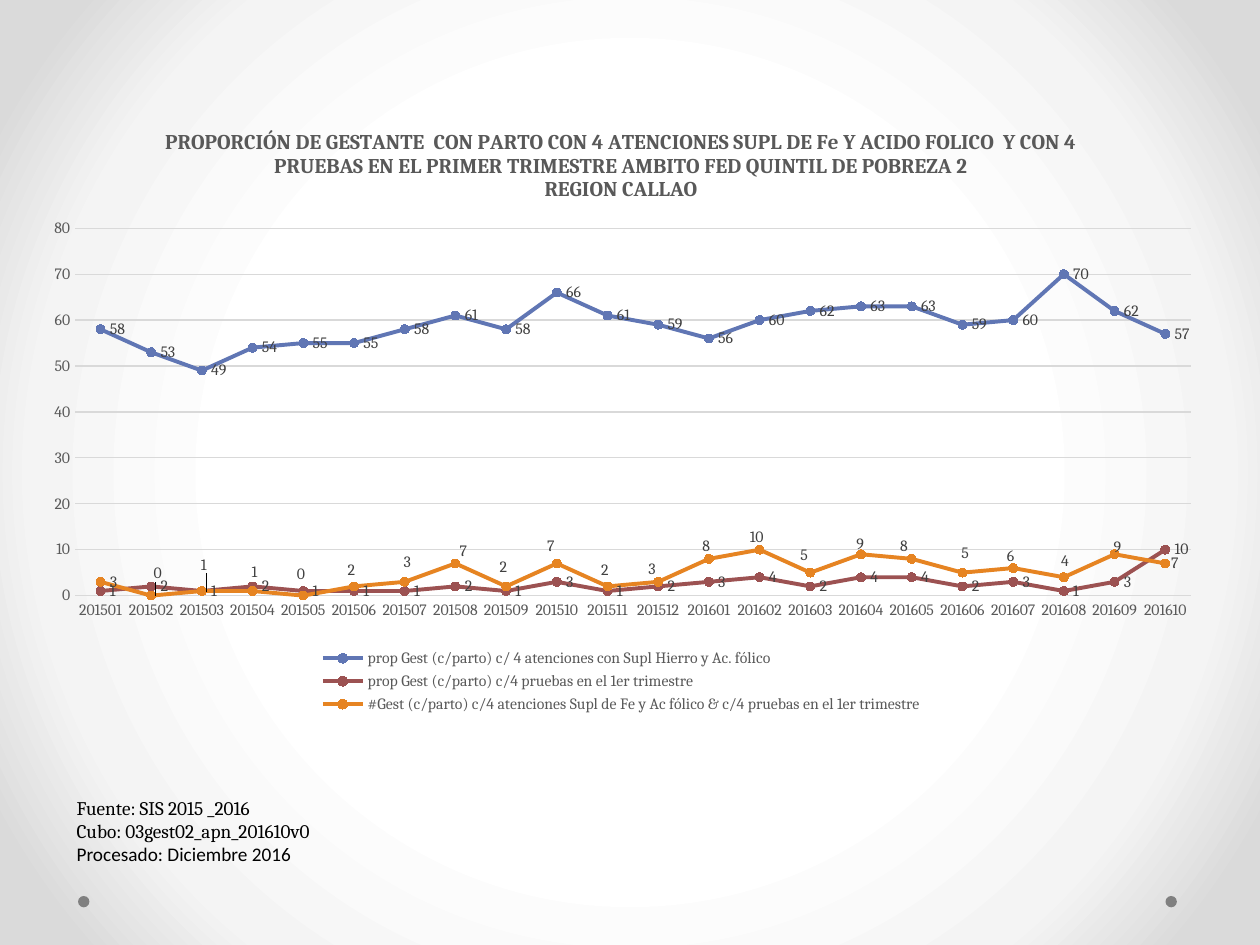
from dataclasses import dataclass

from lxml.etree import SubElement
from pptx import Presentation
from pptx.chart.data import CategoryChartData
from pptx.dml.color import RGBColor
from pptx.enum.chart import XL_CHART_TYPE as ChartType
from pptx.enum.chart import XL_LABEL_POSITION as LabelPos
from pptx.enum.chart import XL_LEGEND_POSITION as LegendPos
from pptx.enum.chart import XL_MARKER_STYLE as Marker
from pptx.enum.chart import XL_TICK_MARK as Tick
from pptx.enum.shapes import MSO_SHAPE as Shape
from pptx.oxml import parse_xml
from pptx.oxml.ns import qn
from pptx.util import Pt


@dataclass(frozen=True)
class Theme:
    serif: str = "Cambria"
    sans: str = "Calibri"
    title: int = 12
    note: int = 11
    label: int = 9
    black: str = "000000"
    axis: str = "595959"
    value: str = "404040"
    grid: str = "D9D9D9"
    dot: str = "808080"
    series: tuple = ("6076B4", "9C5252", "E68422")
    backdrop: tuple = ((50, "FFFFFF"), (76, "F4F4F4"), (92, "DADADA"))


T = Theme()

MONTHS = [f"{year}{month:02d}" for year, last in ((2015, 12), (2016, 10))
          for month in range(1, last + 1)]
SERIES = {
    "prop Gest (c/parto) c/ 4 atenciones con Supl Hierro y Ac. fólico":
        (58, 53, 49, 54, 55, 55, 58, 61, 58, 66, 61,
         59, 56, 60, 62, 63, 63, 59, 60, 70, 62, 57),
    "prop Gest (c/parto) c/4 pruebas en el 1er trimestre":
        (1, 2, 1, 2, 1, 1, 1, 2, 1, 3, 1, 2, 3, 4, 2, 4, 4, 2, 3, 1, 3, 10),
    "#Gest (c/parto) c/4 atenciones Supl de Fe y Ac fólico & c/4 pruebas en el 1er trimestre":
        (3, 0, 1, 1, 0, 2, 3, 7, 2, 7, 2, 3, 8, 10, 5, 9, 8, 5, 6, 4, 9, 7),
}
TITLE = ("PROPORCIÓN DE GESTANTE  CON PARTO CON 4 ATENCIONES SUPL DE Fe Y ACIDO FOLICO  Y CON 4 "
         "PRUEBAS EN EL PRIMER TRIMESTRE AMBITO FED QUINTIL DE POBREZA 2",
         "REGION CALLAO")
LABEL_SHIFTS = (
    (-4, -13), (-6, -15), (-6, -11), (-9, -12), (-9, -9), (-6, -11), (-3, -7),
    (-9, -11), (-11, -10), (-9, -9), (-11, -7), (-9, -7), (-11, -7), (-11, -10),
    (-8, -6), (-12, -7), (-6, -11), (-9, -7), (-7, -9), (-6, -4), (-2, 0))
NOTES = (("Fuente: SIS 2015 _2016", T.serif),
         ("Cubo: 03gest02_apn_201610v0", T.serif),
         ("Procesado: Diciembre 2016", T.sans))


def rgb(code):
    return RGBColor.from_string(code)


def set_font(font, size, color, name=T.serif, bold=False):
    font.size, font.name, font.bold = Pt(size), name, bold
    font.color.rgb = rgb(color)


def set_layout(layout, **values):
    for child in list(layout):
        layout.remove(child)
    manual = SubElement(layout, qn("c:manualLayout"))
    for tag, value in values.items():
        SubElement(manual, qn(f"c:{tag}")).set("val", str(value))


def layout_after(element):
    layout = element.makeelement(qn("c:layout"), {})
    element.addnext(layout)
    return layout


def paint_backdrop(s):
    s.background.fill.gradient()
    old = s.background._cSld.find(".//" + qn("a:gradFill"))
    stops = "".join(f'<a:gs pos="{pos * 1000}"><a:srgbClr val="{color}"/></a:gs>'
                    for pos, color in T.backdrop)
    old.getparent().replace(old, parse_xml(
        '<a:gradFill xmlns:a="http://schemas.openxmlformats.org/drawingml/2006/main" '
        f'rotWithShape="1"><a:gsLst>{stops}</a:gsLst><a:path path="circle">'
        '<a:fillToRect l="50000" t="50000" r="50000" b="50000"/></a:path></a:gradFill>'))


def add_dots(s, left, top, width, size):
    for x in (left, left + width - size):
        sp = s.shapes.add_shape(Shape.OVAL, Pt(x), Pt(top), Pt(size), Pt(size))
        sp.shadow.inherit = False
        sp.fill.solid()
        sp.fill.fore_color.rgb = rgb(T.dot)
        sp.line.fill.background()


def add_notes(s, left, top, width, height):
    tf = s.shapes.add_textbox(Pt(left), Pt(top), Pt(width), Pt(height)).text_frame
    tf.word_wrap = True
    for i, (text, name) in enumerate(NOTES):
        p = tf.add_paragraph() if i else tf.paragraphs[0]
        p.text = text
        set_font(p.font, T.note, T.black, name)


def style_axes(chart):
    for axis in (chart.category_axis, chart.value_axis):
        axis.major_tick_mark = axis.minor_tick_mark = Tick.NONE
        set_font(axis.tick_labels.font, T.label, T.axis)
    line = chart.category_axis.format.line
    grid = chart.value_axis.major_gridlines.format.line
    for rule in (line, grid):
        rule.color.rgb, rule.width = rgb(T.grid), Pt(0.75)
    axis = chart.value_axis
    axis.format.line.fill.background()
    axis.minimum_scale, axis.maximum_scale, axis.major_unit = 0, 80, 10
    axis.tick_labels.number_format = "0"
    axis.tick_labels.number_format_is_linked = False


def style_series(series, color):
    series.smooth = False
    series.format.line.color.rgb, series.format.line.width = rgb(color), Pt(2.25)
    series.marker.style, series.marker.size = Marker.CIRCLE, 5
    series.marker.format.fill.solid()
    series.marker.format.fill.fore_color.rgb = rgb(color)
    series.marker.format.line.color.rgb = rgb(color)
    labels = series.data_labels
    labels.show_value, labels.position = True, LabelPos.RIGHT
    labels.number_format, labels.number_format_is_linked = "0", False
    set_font(labels.font, T.label, T.value)


def shift_labels(series, width, height):
    for i, (dx, dy) in enumerate(LABEL_SHIFTS, 1):
        label = series.points[i].data_label
        set_font(label.font, T.label, T.value)
        label.position = LabelPos.RIGHT
    for element, (dx, dy) in zip(series.data_labels._element.findall(qn("c:dLbl")), LABEL_SHIFTS):
        set_layout(layout_after(element.find(qn("c:idx"))),
                   x=round(dx / width, 4), y=round(dy / height, 4))


def add_trend_chart(s, left, top, width, height):
    data = CategoryChartData(number_format="0")
    data.categories = MONTHS
    for name, values in SERIES.items():
        data.add_series(name, values)
    chart = s.shapes.add_chart(ChartType.LINE_MARKERS, Pt(left), Pt(top),
                               Pt(width), Pt(height), data).chart
    set_font(chart.font, 10, T.black)
    tf = chart.chart_title.text_frame
    for i, text in enumerate(TITLE):
        p = tf.add_paragraph() if i else tf.paragraphs[0]
        p.text = text
        set_font(p.font, T.title, T.axis, bold=True)
    chart.chart_title.include_in_layout = False
    style_axes(chart)
    plot = chart.plots[0]
    plot.vary_by_categories = False
    for series, color in zip(plot.series, T.series):
        style_series(series, color)
    shift_labels(plot.series[2], width, height)
    chart.has_legend = True
    legend = chart.legend
    legend.position, legend.include_in_layout = LegendPos.BOTTOM, False
    set_font(legend.font, T.label, T.axis)
    area = chart._chartSpace.chart.plotArea
    set_layout(area.get_or_add_layout() if hasattr(area, "get_or_add_layout")
               else area.find(qn("c:layout")) if area.find(qn("c:layout")) is not None
               else area.makeelement(qn("c:layout"), {}),
               layoutTarget="inner", xMode="edge", yMode="edge", x=0.04, y=0.2, w=0.94, h=0.6)
    if area.find(qn("c:layout")) is None:
        layout = area.makeelement(qn("c:layout"), {})
        area.insert(0, layout)
        set_layout(layout, layoutTarget="inner", xMode="edge", yMode="edge",
                   x=0.04, y=0.2, w=0.94, h=0.6)
    place = legend._element.find(qn("c:layout"))
    if place is None:
        place = layout_after(legend._element.find(qn("c:legendPos")))
    set_layout(place, xMode="edge", yMode="edge", x=0.24, y=0.88, w=0.52, h=0.12)


def main():
    prs = Presentation()
    prs.slide_width, prs.slide_height = Pt(720), Pt(540)
    s = prs.slides.add_slide(prs.slide_layouts[6])
    paint_backdrop(s)
    add_dots(s, 44.6, 512, 627.9, 6.5)
    add_notes(s, 36.7, 451.4, 232.6, 60.5)
    add_trend_chart(s, 15.8, 60.5, 678.2, 349.9)
    prs.save("out.pptx")


if __name__ == "__main__":
    main()
